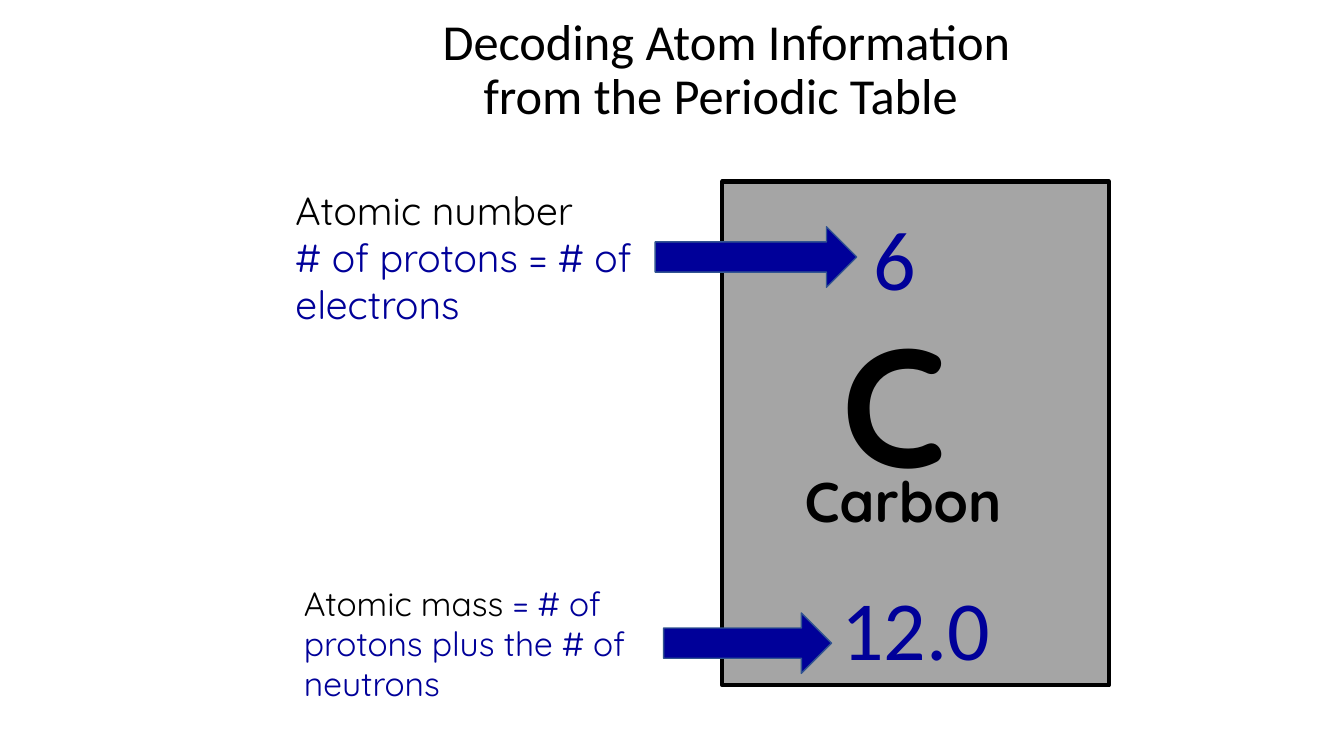
from dataclasses import dataclass

from pptx import Presentation
from pptx.dml.color import RGBColor
from pptx.enum import shapes, text
from pptx.util import Pt


@dataclass(frozen=True)
class Theme:
    black: RGBColor = RGBColor(0x00, 0x00, 0x00)
    blue: RGBColor = RGBColor(0x00, 0x00, 0x99)
    tile: RGBColor = RGBColor(0xA5, 0xA5, 0xA5)
    arrow_edge: RGBColor = RGBColor(0x32, 0x54, 0x91)
    plain: str = "Calibri"
    rounded: str = "Quicksand"
    title: int = 36
    symbol: int = 120
    number: int = 60
    name: int = 40
    large_note: int = 28
    small_note: int = 24


THEME = Theme()
CENTER = text.PP_ALIGN.CENTER
LEFT = text.PP_ALIGN.LEFT


def format_run(run, font, size, color, bold=False):
    run.font.name = font
    run.font.size = Pt(size)
    run.font.color.rgb = color
    run.font.bold = bold


def add_label(slide, box, paragraphs, font, size, align=LEFT, bold=False):
    """Each paragraph is a list of (words, color) pairs."""
    label = slide.shapes.add_textbox(*map(Pt, box))
    frame = label.text_frame
    frame.word_wrap = True
    for index, runs in enumerate(paragraphs):
        paragraph = frame.add_paragraph() if index else frame.paragraphs[0]
        paragraph.alignment = align
        for words, color in runs:
            run = paragraph.add_run()
            run.text = words
            format_run(run, font, size, color, bold)


def add_block(slide, kind, box, fill, line, line_width):
    shape = slide.shapes.add_shape(kind, *map(Pt, box))
    shape.shadow.inherit = False
    shape.fill.solid()
    shape.fill.fore_color.rgb = fill
    shape.line.color.rgb = line
    shape.line.width = Pt(line_width)


def place_title(slide, box):
    title = slide.shapes.title
    title.left, title.top, title.width, title.height = map(Pt, box)
    frame = title.text_frame
    frame.text = "Decoding Atom Information\vfrom the Periodic Table "
    frame.auto_size = text.MSO_AUTO_SIZE.NONE
    frame.vertical_anchor = text.MSO_ANCHOR.MIDDLE
    paragraph = frame.paragraphs[0]
    paragraph.alignment = CENTER
    paragraph.line_spacing = 0.9
    for run in paragraph.runs:
        format_run(run, THEME.plain, THEME.title, THEME.black)


def add_element_tile(slide, box):
    left, top, width, height = box
    add_block(slide, shapes.MSO_SHAPE.RECTANGLE, box, THEME.tile, THEME.black, 3)
    # Offset in the tile, words, font, size, color, alignment, bold
    entries = [
        ((48, 200.2, 162, 55.4), "Carbon", THEME.rounded, THEME.name, THEME.black, CENTER, True),
        ((54, 278.6, 168, 80), "12.0", THEME.plain, THEME.number, THEME.blue, CENTER, False),
        ((90, 14.4, 66, 80), "6", THEME.plain, THEME.number, THEME.blue, CENTER, False),
        ((78, 80.6, 96, 152.6), "C", THEME.rounded, THEME.symbol, THEME.black, LEFT, True),
    ]
    for (x, y, wide, high), words, font, size, color, align, bold in entries:
        add_label(slide, (left + x, top + y, wide, high), [[(words, color)]],
                  font, size, align, bold)


def add_note(slide, box, paragraphs, size, arrow_top, arrow_length):
    """Explanation with an arrow that starts 264 pt from its left edge."""
    left, top, width, height = box
    add_label(slide, box, paragraphs, THEME.rounded, size)
    arrow = (left + 264, top + arrow_top, arrow_length, 43.2)
    add_block(slide, shapes.MSO_SHAPE.RIGHT_ARROW, arrow, THEME.blue, THEME.arrow_edge, 1)


def build_slide(presentation):
    slide = presentation.slides.add_slide(presentation.slide_layouts[5])
    place_title(slide, (198, 6, 642, 90))

    # Periodic table cell
    add_element_tile(slide, (516, 129.6, 276, 360))

    # Atomic number
    add_note(slide, (204, 129.6, 282, 108.7),
             [[("Atomic number", THEME.black)],
              [("# of protons = # of electrons", THEME.blue)]],
             THEME.large_note, 32.4, 144)

    # Atomic mass
    add_note(slide, (210, 412.6, 276, 94.3),
             [[("Atomic mass ", THEME.black),
               ("= # of protons plus the # of neutrons", THEME.blue)]],
             THEME.small_note, 25.2, 120)


def main():
    presentation = Presentation()
    presentation.slide_width = Pt(960)
    presentation.slide_height = Pt(540)
    build_slide(presentation)
    presentation.save("out.pptx")


if __name__ == "__main__":
    main()
